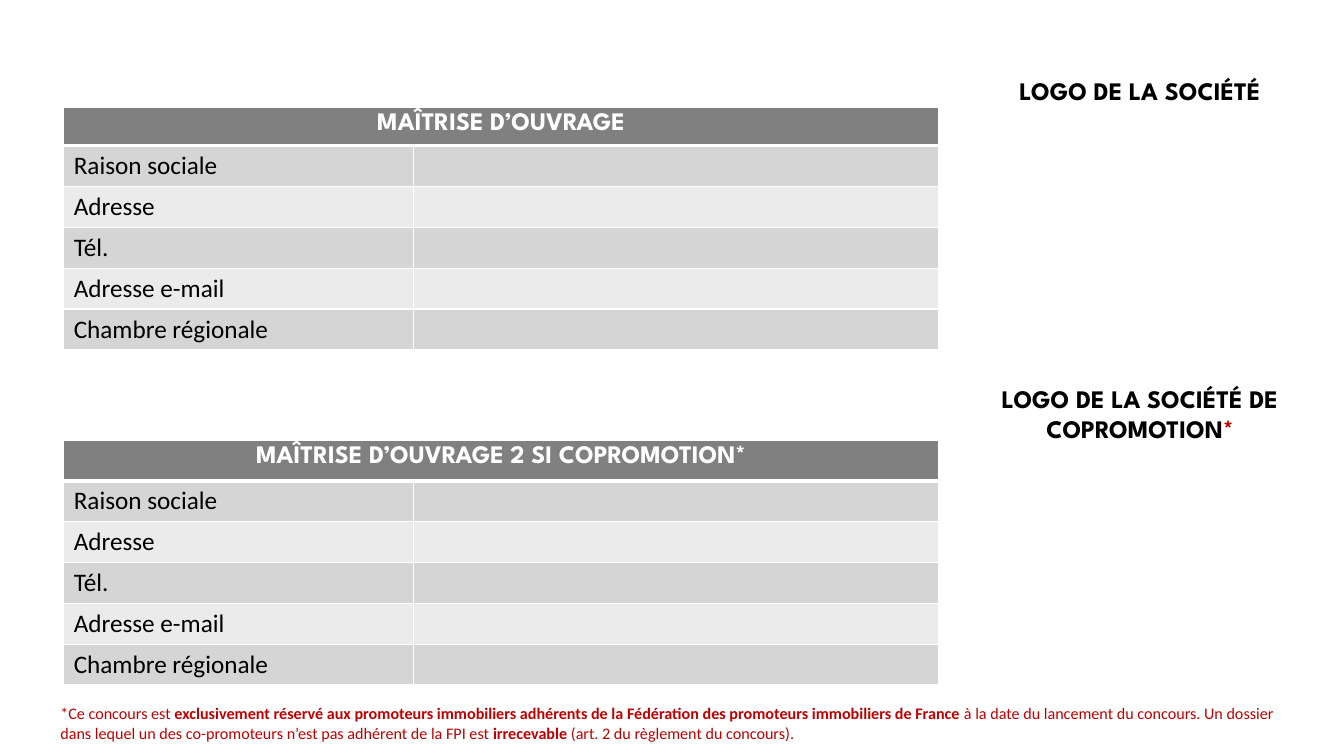
from dataclasses import dataclass

from lxml import etree
from pptx import Presentation
from pptx.dml.color import RGBColor
from pptx.enum import text
from pptx.oxml import ns
from pptx.util import Pt


@dataclass(frozen=True)
class Theme:
    """Colours, fonts and type sizes of the slide."""
    header: str = "808080"
    bands: tuple = ("D5D5D5", "EBEBEB")
    white: str = "FFFFFF"
    black: str = "000000"
    red: str = "C00000"
    heading_font: str = "League Spartan"
    body_font: str = "Calibri"
    body_size: float = 18
    note_size: float = 11.5


THEME = Theme()
FIELDS = ("Raison sociale", "Adresse", "Tél.", "Adresse e-mail", "Chambre régionale")


def style(run, font, size, color, bold):
    """Set the typeface, size, colour and weight of a run."""
    run.font.name = font
    run.font.size = Pt(size)
    run.font.color.rgb = RGBColor.from_string(color)
    run.font.bold = bold


def dress_cell(cell, fill, top=1, bottom=1):
    """Give a cell white borders, with widths in points, and a solid fill."""
    properties = cell._tc.get_or_add_tcPr()
    for side, width in (("L", 1), ("R", 1), ("T", top), ("B", bottom)):
        border = etree.SubElement(properties, ns.qn(f"a:ln{side}"), w=str(Pt(width)))
        paint = etree.SubElement(border, ns.qn("a:solidFill"))
        etree.SubElement(paint, ns.qn("a:srgbClr"), val=THEME.white)
    cell.fill.solid()
    cell.fill.fore_color.rgb = RGBColor.from_string(fill)


def add_owner_table(slide, box, title):
    """Draw a form with a merged title row and one row per field."""
    left, top, width, height = box
    header_height = 27
    form = slide.shapes.add_table(len(FIELDS) + 1, 2, *map(Pt, box)).table
    form.columns[0].width = Pt(width * 0.4)
    form.columns[1].width = Pt(width * 0.6)
    form.rows[0].height = Pt(header_height)
    for cell in form.rows[0].cells:
        dress_cell(cell, THEME.header, bottom=3)
    heading = form.cell(0, 0)
    heading.merge(form.cell(0, 1))
    heading.text_frame.text = title
    paragraph = heading.text_frame.paragraphs[0]
    paragraph.alignment = text.PP_ALIGN.CENTER
    style(paragraph.runs[0], THEME.heading_font, THEME.body_size, THEME.white, True)
    for index, field in enumerate(FIELDS, 1):
        form.rows[index].height = Pt((height - header_height) / len(FIELDS))
        for cell in form.rows[index].cells:
            dress_cell(cell, THEME.bands[(index - 1) % 2], top=3 if index == 1 else 1)
        label = form.cell(index, 0).text_frame
        label.text = field
        style(label.paragraphs[0].runs[0], THEME.body_font, THEME.body_size, THEME.black, False)


def add_text(slide, box, pieces, font, size, alignment):
    """Write one wrapped paragraph from (wording, colour, bold) pieces."""
    frame = slide.shapes.add_textbox(*map(Pt, box)).text_frame
    frame.word_wrap = True
    frame.auto_size = text.MSO_AUTO_SIZE.SHAPE_TO_FIT_TEXT
    paragraph = frame.paragraphs[0]
    paragraph.alignment = alignment
    for wording, color, bold in pieces:
        run = paragraph.add_run()
        run.text = wording
        style(run, font, size, color, bold)


def add_logo_caption(slide, box, pieces):
    """Write a centred caption above a logo area."""
    add_text(slide, box, pieces, THEME.heading_font, THEME.body_size, text.PP_ALIGN.CENTER)


def add_footnote(slide, box):
    """Write the eligibility note at the foot of the slide."""
    pieces = (
        ("*Ce concours est ", False),
        ("exclusivement réservé aux promoteurs immobiliers adhérents de la "
         "Fédération des promoteurs immobiliers de France ", True),
        ("à la date du lancement du concours. Un dossier dans lequel un des "
         "co-promoteurs n’est pas adhérent de la FPI est ", False),
        ("irrecevable", True),
        (" (art. 2 du règlement du concours).", False),
    )
    note = [(wording, THEME.red, bold) for wording, bold in pieces]
    add_text(slide, box, note, THEME.body_font, THEME.note_size, text.PP_ALIGN.LEFT)


def main():
    """Build the slide and save it."""
    deck = Presentation()
    deck.slide_width, deck.slide_height = Pt(960), Pt(540)
    slide = deck.slides.add_slide(deck.slide_layouts[6])
    add_owner_table(slide, (45.5, 77, 625, 173), "MAÎTRISE D’OUVRAGE")
    add_logo_caption(slide, (694, 50.5, 240.5, 29),
                     [("LOGO DE LA SOCIÉTÉ", THEME.black, True)])
    add_logo_caption(slide, (694, 270, 240.5, 51),
                     [("LOGO DE LA SOCIÉTÉ DE COPROMOTION", THEME.black, True),
                      ("*", THEME.red, True)])
    add_owner_table(slide, (45.5, 314.5, 625, 173), "MAÎTRISE D’OUVRAGE 2 SI COPROMOTION*")
    add_footnote(slide, (36, 499, 898.5, 35))
    deck.save("out.pptx")


if __name__ == "__main__":
    main()
